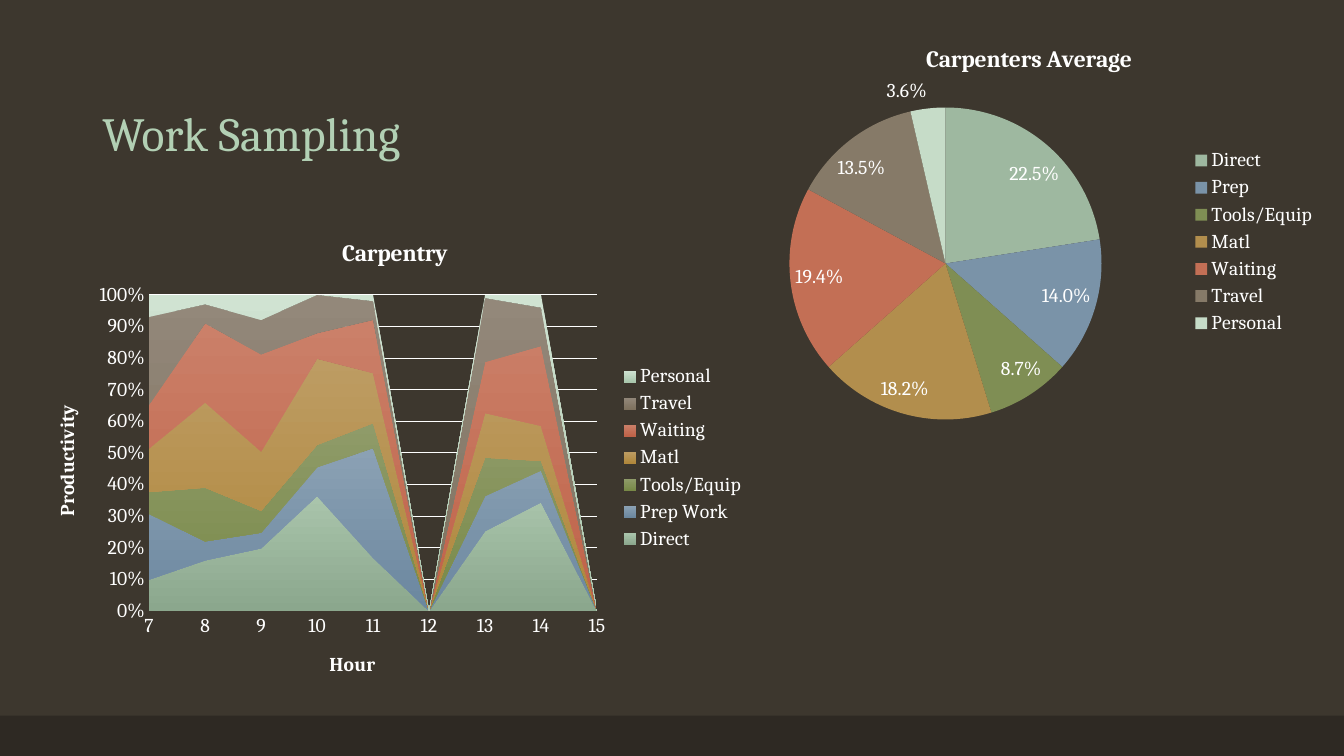
from pptx import Presentation
from pptx.chart.data import CategoryChartData
from pptx.dml.color import RGBColor
from pptx.enum.chart import XL_CHART_TYPE, XL_LABEL_POSITION, XL_LEGEND_POSITION, XL_TICK_MARK
from pptx.enum.shapes import MSO_SHAPE
from pptx.enum.text import MSO_ANCHOR
from pptx.oxml import parse_xml
from pptx.oxml.ns import nsdecls
from pptx.util import Inches, Pt

COLS, ROWS = 160, 90
WIDE, HIGH = Inches(13.33), Inches(7.5)
FACE = "Cambria"
WHITE = "FFFFFF"

SHARES = [
    ("Direct", 0.225, "9EB8A0"),
    ("Prep", 0.14, "7A93A8"),
    ("Tools/Equip", 0.087, "7F8E54"),
    ("Matl", 0.182, "B28E4D"),
    ("Waiting", 0.194, "C36F55"),
    ("Travel", 0.135, "867A68"),
    ("Personal", 0.036, "C6DCC8"),
]
HOURS = [str(hour) for hour in range(7, 16)]
WORK = [
    ("Direct", (10, 16, 20, 36, 17, 0, 25, 34, 0), "A9C4AB", "8BA78D"),
    ("Prep Work", (21, 6, 5, 9, 35, 0, 11, 10, 0), "8BA1B4", "6B879F"),
    ("Tools/Equip", (7, 17, 7, 7, 8, 0, 12, 3, 0), "8F9B69", "788947"),
    ("Matl", (14, 27, 19, 27, 16, 0, 14, 11, 0), "BD9C63", "B0873B"),
    ("Waiting", (14, 25, 31, 8, 17, 0, 16, 25, 0), "CB8069", "BF6248"),
    ("Travel", (28, 6, 11, 12, 6, 0, 20, 12, 0), "93887A", "7E715E"),
    ("Personal", (7, 3, 8, 0, 2, 0, 1, 4, 0), "D0E3D2", "A9C6AC"),
]


def tint(code):
    return RGBColor.from_string(code)


def grid(left, top, wide, high):
    return (int(WIDE * left / COLS), int(HIGH * top / ROWS),
            int(WIDE * wide / COLS), int(HIGH * high / ROWS))


def style(font, size, code=WHITE, bold=False):
    font.name = FACE
    font.size = Pt(size)
    font.bold = bold
    font.color.rgb = tint(code)


def label(frame, text, size, code=WHITE, bold=False):
    run = frame.paragraphs[0].add_run()
    run.text = text
    style(run.font, size, code, bold)


def place(chart, left, top, wide, high):
    area = chart.element.xpath("c:chart/c:plotArea")[0]
    for old in area.xpath("c:layout"):
        area.remove(old)
    area.insert(0, parse_xml(
        f'<c:layout {nsdecls("c")}><c:manualLayout><c:layoutTarget val="inner"/>'
        '<c:xMode val="edge"/><c:yMode val="edge"/>'
        f'<c:x val="{left}"/><c:y val="{top}"/><c:w val="{wide}"/><c:h val="{high}"/>'
        '</c:manualLayout></c:layout>'))


def plot(slide, box, kind, data, title):
    chart = slide.shapes.add_chart(kind, *box, data).chart
    style(chart.font, 14)
    chart.has_title = True
    label(chart.chart_title.text_frame, title, 16.8, bold=True)
    chart.chart_title.include_in_layout = False
    chart.has_legend = True
    chart.legend.position = XL_LEGEND_POSITION.RIGHT
    chart.legend.include_in_layout = False
    style(chart.legend.font, 14)
    return chart


def footer(slide, box):
    band = slide.shapes.add_shape(MSO_SHAPE.RECTANGLE, *box)
    band.shadow.inherit = False
    band.fill.solid()
    band.fill.fore_color.rgb = tint("2E2923")
    band.line.fill.background()


def header(slide, box):
    frame = slide.shapes.add_textbox(*box).text_frame
    frame.word_wrap = True
    frame.vertical_anchor = MSO_ANCHOR.BOTTOM
    frame.paragraphs[0].line_spacing = 0.9
    label(frame, "Work Sampling", 34, "B2D0B4")


def average(slide, box):
    data = CategoryChartData(number_format="0.0%")
    data.categories = [name for name, share, code in SHARES]
    data.add_series("Carpenters Average", [share for name, share, code in SHARES])
    chart = plot(slide, box, XL_CHART_TYPE.PIE, data, "Carpenters Average")
    place(chart, 0.07, 0.19, 0.58, 0.72)
    pie = chart.plots[0]
    pie.vary_by_categories = True
    for index, (name, share, code) in enumerate(SHARES):
        fill = pie.series[0].points[index].format.fill
        fill.solid()
        fill.fore_color.rgb = tint(code)
    pie.has_data_labels = True
    tags = pie.data_labels
    tags.show_value = True
    tags.show_percentage = False
    tags.number_format = "0.0%"
    tags.number_format_is_linked = False
    tags.position = XL_LABEL_POSITION.BEST_FIT
    style(tags.font, 14)


def trim(axis, title):
    axis.has_title = True
    label(axis.axis_title.text_frame, title, 14, bold=True)
    axis.major_tick_mark = XL_TICK_MARK.NONE
    axis.minor_tick_mark = XL_TICK_MARK.NONE
    style(axis.tick_labels.font, 14)


def hourly(slide, box):
    data = CategoryChartData()
    data.categories = HOURS
    for name, values, light, dark in WORK:
        data.add_series(name, values)
    chart = plot(slide, box, XL_CHART_TYPE.AREA_STACKED_100, data, "Carpentry")
    place(chart, 0.16, 0.16, 0.62, 0.66)
    chart.plots[0].vary_by_categories = False
    for series, (name, values, light, dark) in zip(chart.plots[0].series, WORK):
        fill = series.format.fill
        fill.gradient()
        fill.gradient_angle = 270
        for stop, code in zip(fill.gradient_stops, (light, dark)):
            stop.color.rgb = tint(code)
    base, scale = chart.category_axis, chart.value_axis
    trim(base, "Hour")
    trim(scale, "Productivity")
    base.has_major_gridlines = False
    base.format.line.color.rgb = tint(WHITE)
    scale.format.line.fill.background()
    scale.minimum_scale, scale.maximum_scale, scale.major_unit = 0, 1, 0.1
    scale.tick_labels.number_format = "0%"
    scale.tick_labels.number_format_is_linked = False
    scale.has_major_gridlines = True
    rule = scale.major_gridlines.format.line
    rule.color.rgb = tint(WHITE)
    rule.width = Pt(0.75)
    for cross in chart.element.xpath(".//c:valAx/c:crossBetween"):
        cross.set("val", "midCat")


def main():
    deck = Presentation()
    deck.slide_width, deck.slide_height = WIDE, HIGH
    slide = deck.slides.add_slide(deck.slide_layouts[6])
    slide.background.fill.solid()
    slide.background.fill.fore_color.rgb = tint("3D372E")
    footer(slide, grid(0, 85.2, 160, 4.8))
    header(slide, grid(11, 4.8, 138, 15))
    average(slide, grid(87, 3, 71, 51.6))
    hourly(slide, grid(4, 26, 86, 57))
    deck.save("out.pptx")


if __name__ == "__main__":
    main()
